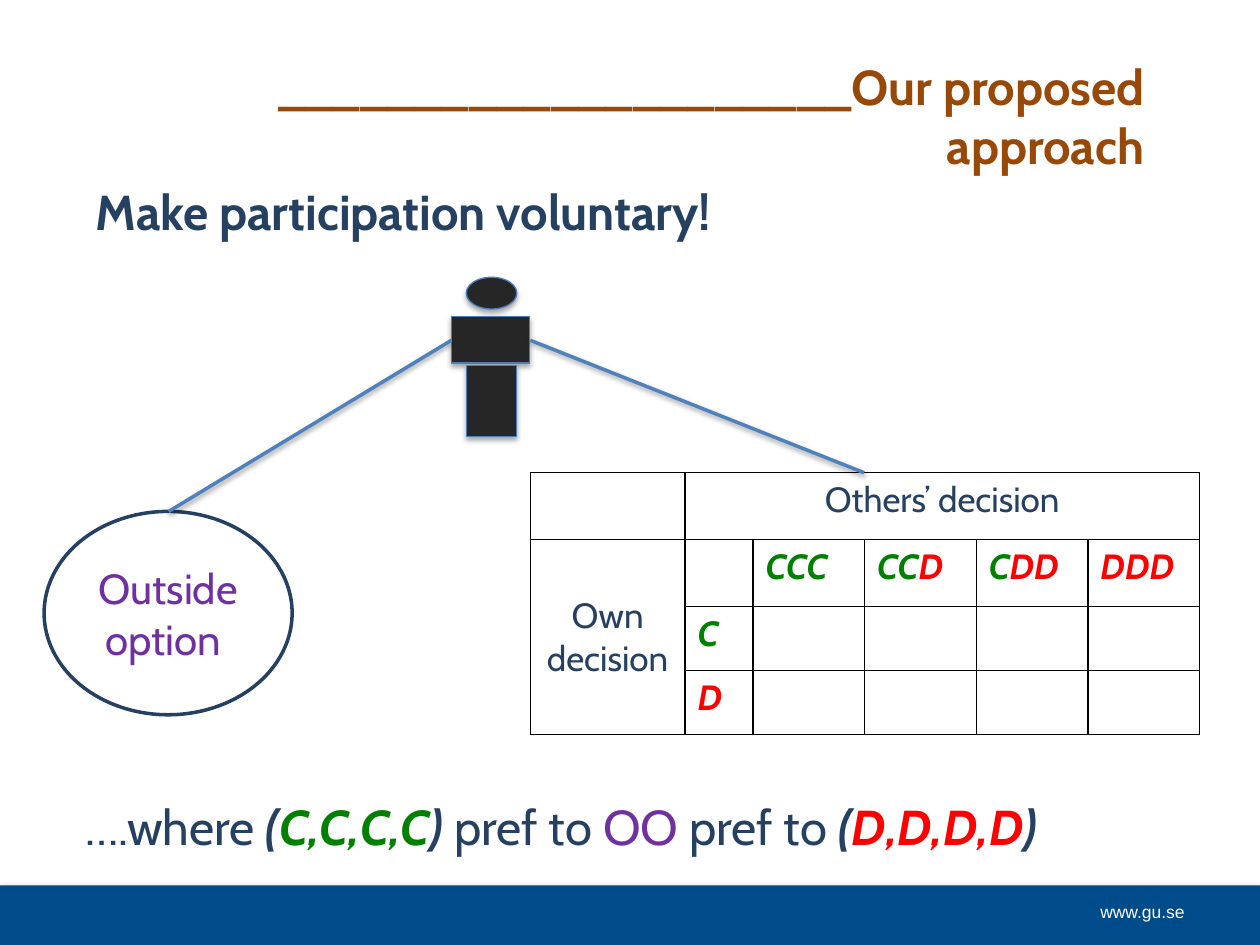
"""Build the slide on voluntary participation with an outside option."""
from lxml import etree
from pptx import Presentation
from pptx.dml.color import RGBColor
from pptx.enum.shapes import MSO_CONNECTOR, MSO_SHAPE
from pptx.enum.text import MSO_ANCHOR, PP_ALIGN
from pptx.oxml import parse_xml
from pptx.util import Cm, Pt

RECTANGLE, OVAL = MSO_SHAPE.RECTANGLE, MSO_SHAPE.OVAL
STRAIGHT = MSO_CONNECTOR.STRAIGHT
LEFT, CENTER, RIGHT = PP_ALIGN.LEFT, PP_ALIGN.CENTER, PP_ALIGN.RIGHT
MIDDLE, TOP = MSO_ANCHOR.MIDDLE, MSO_ANCHOR.TOP

WHITE = RGBColor(0xFF, 0xFF, 0xFF)
NAVY = RGBColor(0x25, 0x40, 0x61)
BROWN = RGBColor(0x98, 0x48, 0x07)
PURPLE = RGBColor(0x70, 0x30, 0xA0)
GREEN = RGBColor(0x00, 0x80, 0x00)
RED = RGBColor(0xFF, 0x00, 0x00)
BAND_BLUE = RGBColor(0x00, 0x4B, 0x89)
CHARCOAL = RGBColor(0x26, 0x26, 0x26)
EDGE_BLUE = RGBColor(0x4B, 0x7E, 0xBC)
BRANCH_BLUE = RGBColor(0x4F, 0x81, 0xBD)

PLAIN = {"name": "Cabin", "bold": False, "italic": False}
BOLD = PLAIN | {"bold": True}
STRONG = BOLD | {"italic": True}
FOOTER = PLAIN | {"name": "Arial"}
NAMESPACE = "http://schemas.openxmlformats.org/drawingml/2006/main"


def write(frame, spans, size, align=LEFT, anchor=TOP):
    frame.word_wrap = True
    frame.vertical_anchor = anchor
    para = frame.paragraphs[0]
    para.alignment = align
    for text, color, style in spans:
        span = para.add_run()
        span.text = text
        span.font.color.rgb = color
        for key, value in (style | {"size": Pt(size)}).items():
            setattr(span.font, key, value)


def add_shadow(shape, blur, distance, opacity):
    shape._element.spPr.append(parse_xml(
        f'<a:effectLst xmlns:a="{NAMESPACE}"><a:outerShdw blurRad="{Pt(blur)}" '
        f'dist="{Pt(distance)}" dir="5400000" rotWithShape="0"><a:srgbClr val="000000">'
        f'<a:alpha val="{opacity * 1000}"/></a:srgbClr></a:outerShdw></a:effectLst>'))


deck = Presentation()
deck.slide_width, deck.slide_height = Cm(25.4), Cm(19.05)
page = deck.slides.add_slide(deck.slide_layouts[5])

band = page.shapes.add_shape(RECTANGLE, Cm(0), Cm(17.85), Cm(25.4), Cm(1.2))
band.fill.solid()
band.fill.fore_color.rgb = BAND_BLUE
band.line.fill.background()
add_shadow(band, 5, 1.8, 35)

title = page.shapes.title
title.left, title.top, title.width, title.height = Cm(1.68), Cm(1.52), Cm(21.64), Cm(1.6)
write(title.text_frame, [("_____________________Our proposed approach", BROWN, BOLD)],
      28, RIGHT, MIDDLE)

texts = [
    (21.3, 18.03, 2.83, 0.69, 10, RIGHT, [("www.gu.se", WHITE, FOOTER)]),
    (1.68, 3.53, 18.03, 1.45, 28, LEFT, [("Make participation voluntary!", NAVY, BOLD)]),
    (1.47, 15.93, 20.42, 1.45, 28, LEFT, [
        ("….where ", NAVY, PLAIN), ("(", NAVY, STRONG), ("C,C,C,C", GREEN, STRONG),
        (") ", NAVY, STRONG), ("pref to ", NAVY, PLAIN), ("OO ", PURPLE, PLAIN),
        ("pref to ", NAVY, PLAIN), ("(", NAVY, STRONG), ("D,D,D,D", RED, STRONG),
        (")", NAVY, STRONG)]),
]
for left, top, width, height, size, align, spans in texts:
    box = page.shapes.add_textbox(Cm(left), Cm(top), Cm(width), Cm(height))
    write(box.text_frame, spans, size, align)

frame = page.shapes.add_table(4, 6, Cm(10.69), Cm(9.53), Cm(13.49), Cm(5.28))
table = frame.table
table.first_row = table.horz_banding = False
for column, width in zip(table.columns, [3.12, 1.37] + [2.25] * 4):
    column.width = Cm(width)
for row, height in zip(table.rows, [1.35, 1.35, 1.29, 1.29]):
    row.height = Cm(height)
for cell in table.iter_cells():
    for side in ("lnL", "lnR", "lnT", "lnB"):
        border = etree.SubElement(cell._tc.get_or_add_tcPr(), f"{{{NAMESPACE}}}{side}", w=str(Pt(1)))
        paint = etree.SubElement(border, f"{{{NAMESPACE}}}solidFill")
        etree.SubElement(paint, f"{{{NAMESPACE}}}srgbClr", val="000000")
    cell.fill.solid()
    cell.fill.fore_color.rgb = WHITE
table.cell(0, 1).merge(table.cell(0, 5))
table.cell(1, 0).merge(table.cell(3, 0))
write(table.cell(0, 1).text_frame, [("Others’ decision", NAVY, PLAIN)], 20, CENTER)
write(table.cell(1, 0).text_frame, [("Own decision", NAVY, PLAIN)], 20, CENTER)
table.cell(1, 0).vertical_anchor = MIDDLE

choices = {(1, 2): ("CCC", ""), (1, 3): ("CC", "D"), (1, 4): ("C", "DD"),
           (1, 5): ("", "DDD"), (2, 1): ("C", ""), (3, 1): ("", "D")}
for (row, column), letters in choices.items():
    spans = [(text, color, STRONG) for text, color in zip(letters, (GREEN, RED)) if text]
    write(table.cell(row, column).text_frame, spans, 20)

figure = page.shapes.add_group_shape()
for kind, left, top, width, height in [
    (OVAL, 9.4, 5.59, 1.02, 0.64),
    (RECTANGLE, 9.1, 6.38, 1.58, 0.94),
    (RECTANGLE, 9.4, 7.37, 1.02, 1.43),
]:
    part = figure.shapes.add_shape(kind, Cm(left), Cm(top), Cm(width), Cm(height))
    part.fill.solid()
    part.fill.fore_color.rgb = CHARCOAL
    part.line.color.rgb = EDGE_BLUE
    part.line.width = Pt(0.75)
    add_shadow(part, 3.1, 1.8, 35)

outside = page.shapes.add_shape(OVAL, Cm(0.89), Cm(10.31), Cm(5), Cm(4.1))
outside.shadow.inherit = False
outside.fill.solid()
outside.fill.fore_color.rgb = WHITE
outside.line.color.rgb = NAVY
outside.line.width = Pt(2)
write(outside.text_frame, [("Outside option ", PURPLE, PLAIN)], 24, CENTER, MIDDLE)

for start, end_left, end_top in [(9.1, 3.4, 10.31), (10.69, 17.42, 9.53)]:
    branch = page.shapes.add_connector(STRAIGHT, Cm(start), Cm(6.86), Cm(end_left), Cm(end_top))
    branch.line.color.rgb = BRANCH_BLUE
    branch.line.width = Pt(2)
    add_shadow(branch, 3.1, 1.6, 38)

deck.save("out.pptx")
